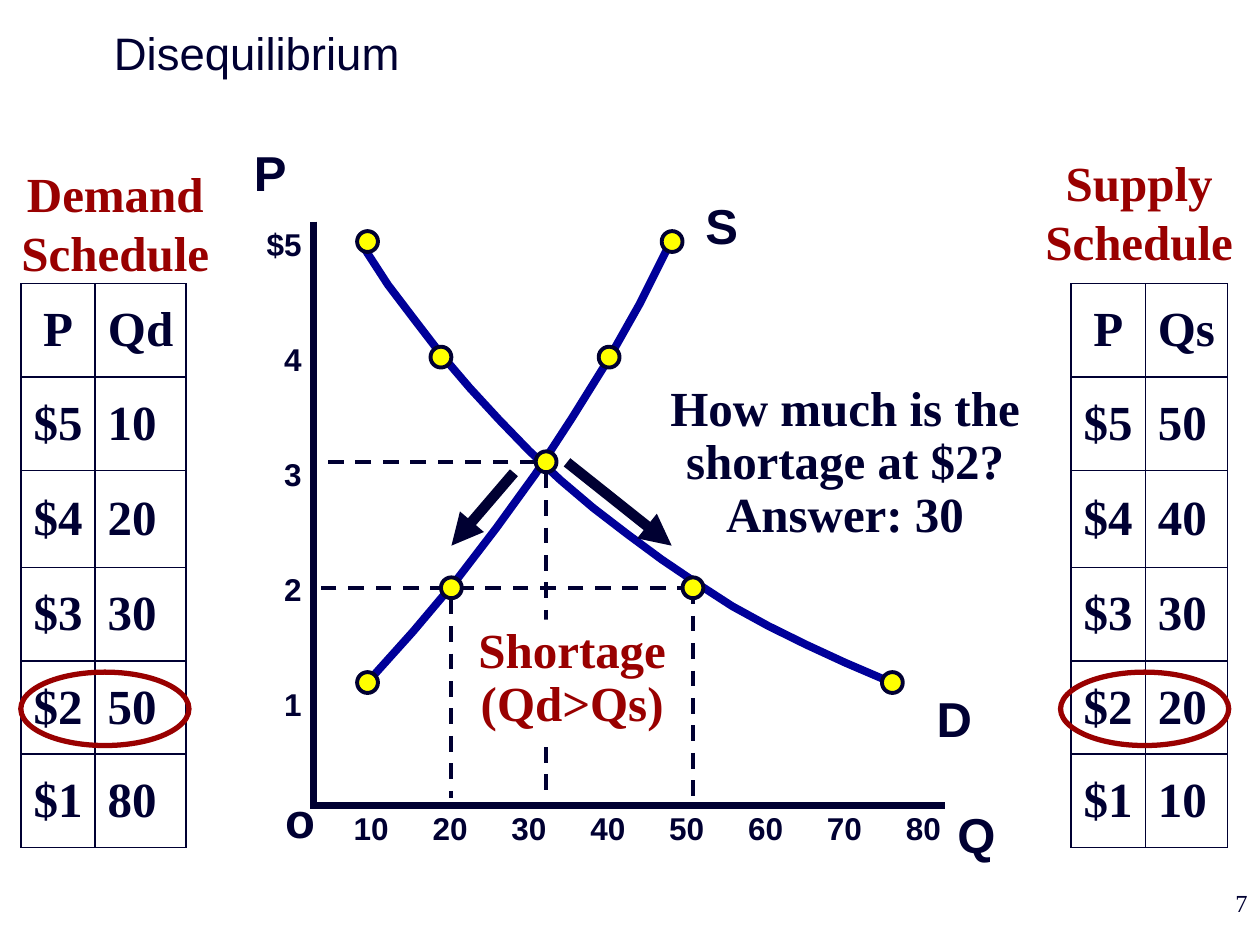
import pptx
import pptx.dml.color
import pptx.enum.dml
import pptx.enum.shapes
import pptx.enum.text
import pptx.oxml
import pptx.oxml.ns
import pptx.util

Cm, Pt = pptx.util.Cm, pptx.util.Pt
RGB = pptx.dml.color.RGBColor
ALIGN = pptx.enum.text.PP_ALIGN
ANCHOR = pptx.enum.text.MSO_ANCHOR
SHAPE = pptx.enum.shapes.MSO_SHAPE
qn = pptx.oxml.ns.qn

INK = RGB(0x00, 0x00, 0x32)
RED = RGB(0x99, 0x00, 0x00)
BLUE = RGB(0x00, 0x00, 0x99)
GOLD = RGB(0xFF, 0xFF, 0x00)
WHITE = RGB(0xFF, 0xFF, 0xFF)
SANS, SERIF = "Arial", "Times New Roman"

TITLE = "Disequilibrium"
PRICES = ["$5", "4", "3", "2", "1"]
AMOUNTS = ["10", "20", "30", "40", "50", "60", "70", "80"]
TICK = 1.59  # gap between quantity labels, cm

# left edge, column widths, rows
TABLES = [
    (0.42, (1.5, 1.83), [("P", "Qd"), ("$5", "10"), ("$4", "20"),
                         ("$3", "30"), ("$2", "50"), ("$1", "80")]),
    (21.59, (1.5, 1.65), [("P", "Qs"), ("$5", "50"), ("$4", "40"),
                          ("$3", "30"), ("$2", "20"), ("$1", "10")]),
]
ROWS = (1.88, 1.88, 1.96, 1.88, 1.88, 1.88)
RINGS = [(0.42, 13.55, 3.39, 1.48), (21.38, 13.55, 3.39, 1.48)]

HEADS = [("Demand Schedule", (0, 3.18, 4.65, 2.62)),
         ("Supply Schedule", (20.53, 2.96, 4.87, 2.62))]
MARKS = [("P", (4.87, 2.74, 1.17, 1.44)), ("S", (13.97, 3.81, 1.17, 1.44)),
         ("D", (18.63, 13.76, 1.22, 1.44)), ("Q", (19.05, 16.09, 1.27, 1.44)),
         ("o", (5.5, 15.8, 1.12, 1.44))]

DEMAND = [(7.34, 5), (7.82, 5.74), (8.36, 6.45), (8.89, 7.14), (9.47, 7.82),
          (10.06, 8.46), (10.67, 9.09), (11.3, 9.68), (11.96, 10.24),
          (12.65, 10.77), (13.34, 11.28), (14.05, 11.76), (14.76, 12.22),
          (15.49, 12.62), (16.26, 13), (17.04, 13.36), (17.81, 13.69)]
SUPPLY = [(7.44, 13.72), (8.33, 12.73), (9.19, 11.71), (10.01, 10.64),
          (10.8, 9.55), (11.53, 8.43), (12.24, 7.29), (12.9, 6.12),
          (13.51, 4.9)]
DOTS = [(7.41, 4.87), (8.89, 7.2), (13.97, 11.85), (17.99, 13.76),
        (7.41, 13.76), (9.1, 11.85), (12.28, 7.2), (13.55, 4.87),
        (11.01, 9.31)]
DOT = 0.42

AXES = [(6.32, 4.47, 6.32, 16.31), (6.25, 16.23, 19.05, 16.23)]
GUIDES = [(9.1, 12.07, 9.1, 16.08), (13.97, 11.86, 13.97, 16.31),
          (13.97, 11.86, 6.35, 11.86), (10.8, 9.32, 6.35, 9.32),
          (11.01, 9.53, 11.01, 16.08)]
ARROWS = [(10.36, 9.53, 9.1, 11), (11.43, 9.32, 13.54, 11)]

deck = pptx.Presentation()
deck.slide_width, deck.slide_height = Cm(25.4), Cm(19.05)
slide = deck.slides.add_slide(deck.slide_layouts[5])
shapes = slide.shapes


def put(shape, box):
    shape.left, shape.top, shape.width, shape.height = map(Cm, box)


def write(frame, lines, size, face, color, bold=True, align=ALIGN.CENTER,
          space=None, gap=0):
    """Fill a frame; space is line spacing, gap the points between lines."""
    frame.text = "\n".join(lines)
    for i, para in enumerate(frame.paragraphs):
        para.alignment = align
        para.line_spacing = space
        para.space_before = Pt(gap if i else 0)
        font = para.font
        font.size, font.name, font.bold = Pt(size), face, bold
        font.color.rgb = color


def label(box, lines, size, face, color, wrap=True, **style):
    frame = shapes.add_textbox(*map(Cm, box)).text_frame
    frame.word_wrap = wrap
    write(frame, lines, size, face, color, **style)
    return frame


def line(ends, width, dash=False, arrow=False):
    link = shapes.add_connector(
        pptx.enum.shapes.MSO_CONNECTOR.STRAIGHT, *map(Cm, ends))
    link.line.color.rgb = INK
    link.line.width = Pt(width)
    if dash:
        link.line.dash_style = pptx.enum.dml.MSO_LINE.DASH
    if arrow:
        tail = pptx.oxml.parse_xml(
            f'<a:tailEnd {pptx.oxml.ns.nsdecls("a")} type="triangle"/>')
        link.line._get_or_add_ln().append(tail)
    props = link._element.spPr
    props.append(props.makeelement(qn("a:effectLst"), {}))


def oval(box, color, width, fill=None):
    ring = shapes.add_shape(SHAPE.OVAL, *map(Cm, box))
    ring.shadow.inherit = False
    ring.line.color.rgb, ring.line.width = color, Pt(width)
    if fill:
        ring.fill.solid()
        ring.fill.fore_color.rgb = fill
    else:
        ring.fill.background()


def curve(points):
    spots = [(Cm(x), Cm(y)) for x, y in points]
    build = shapes.build_freeform(*spots[0])
    build.add_line_segments(spots[1:], close=False)
    path = build.convert_to_shape()
    path.shadow.inherit = False
    path.fill.background()
    path.line.color.rgb, path.line.width = BLUE, Pt(4.5)


def border(cell):
    props = cell._tc.get_or_add_tcPr()
    for side in "LRTB":
        props.append(pptx.oxml.parse_xml(
            f'<a:ln{side} {pptx.oxml.ns.nsdecls("a")} w="12700"><a:solidFill>'
            f'<a:srgbClr val="{INK}"/></a:solidFill></a:ln{side}>'))


def table(left, widths, rows):
    grid = shapes.add_table(len(rows), 2, Cm(left), Cm(5.72),
                            Cm(sum(widths)), Cm(sum(ROWS))).table
    grid.first_row = grid.horz_banding = False
    for col, width in zip(grid.columns, widths):
        col.width = Cm(width)
    for r, row in enumerate(rows):
        grid.rows[r].height = Cm(ROWS[r])
        for c, text in enumerate(row):
            cell = grid.cell(r, c)
            left_set = r > 0 and c == 1
            border(cell)
            cell.fill.background()
            cell.vertical_anchor = ANCHOR.MIDDLE
            cell.margin_left = Cm(0.25 if left_set else 0.2)
            cell.margin_right = Cm(0.2)
            write(cell.text_frame, [text], 28, SERIF, INK,
                  align=ALIGN.LEFT if left_set else ALIGN.CENTER)


title = shapes.title
put(title, (-7.52, 0.36, 25.4, 1.37))
title.text_frame.vertical_anchor = ANCHOR.MIDDLE
write(title.text_frame, [TITLE], 26, SANS, INK, bold=False)

for ends in GUIDES:
    line(ends, 2.25, dash=True)
for ends in AXES:
    line(ends, 4)
for points in (DEMAND, SUPPLY):
    curve(points)
for x, y in DOTS:
    oval((x - DOT / 2, y - DOT / 2, DOT, DOT), INK, 2.25, GOLD)
for ends in ARROWS:
    line(ends, 6, arrow=True)

for text, box in MARKS:
    label(box, [text], 28, SANS, INK, wrap=False, align=ALIGN.LEFT)
label((5.11, 4.42, 1.22, 10.19), PRICES, 18, SANS, INK, wrap=False,
      align=ALIGN.RIGHT, gap=44)
scale = label((6.88, 16.18, 12.9, 1.02), ["\t".join(AMOUNTS)], 18, SANS, INK,
              align=ALIGN.LEFT)
props = scale.paragraphs[0]._p.get_or_add_pPr()
stops = props.makeelement(qn("a:tabLst"), {})
for n in range(1, len(AMOUNTS)):
    stops.append(stops.makeelement(
        qn("a:tab"), {"pos": str(Cm(n * TICK)), "algn": "l"}))
props.insert_element_before(stops, "a:defRPr", "a:extLst")

for text, box in HEADS:
    label(box, [text], 28, SERIF, RED)
for spec_row in TABLES:
    table(*spec_row)
for box in RINGS:
    oval(box, RED, 3)

short = shapes.add_shape(SHAPE.RECTANGLE, *map(Cm, (9.31, 12.49, 4.45, 2.4)))
short.shadow.inherit = False
short.fill.solid()
short.fill.fore_color.rgb = WHITE
short.line.fill.background()
short.text_frame.vertical_anchor = ANCHOR.TOP
write(short.text_frame, ["Shortage", "(Qd>Qs)"], 28, SERIF, RED, space=0.9)
label((13.12, 7.62, 7.83, 3.45),
      ["How much is the shortage at $2?", "Answer: 30"], 28, SERIF, INK,
      space=0.9)
label((20.12, 17.78, 5.28, 1.27), ["7"], 14, SERIF, INK, bold=False,
      align=ALIGN.RIGHT)

deck.save("out.pptx")
